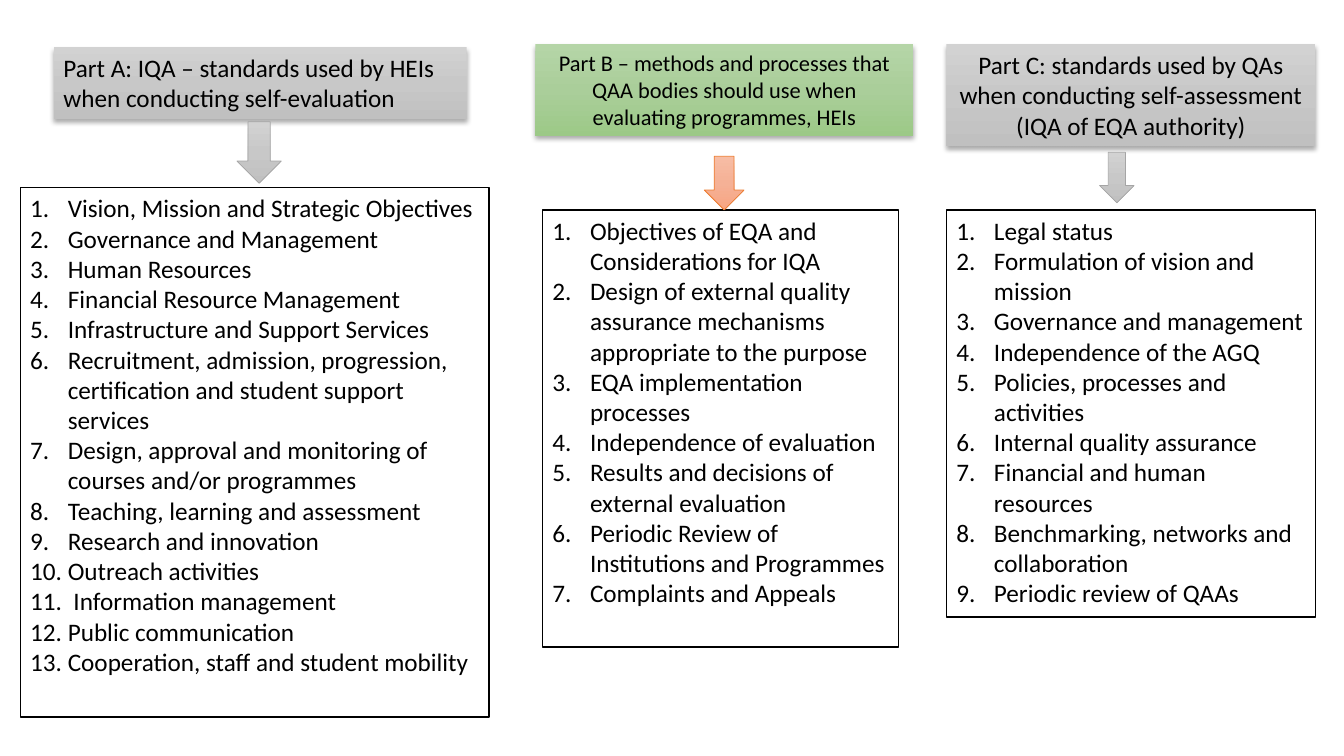
from lxml.etree import SubElement
from copy import deepcopy
from pptx import Presentation
from pptx.dml.color import RGBColor
from pptx.enum.shapes import MSO_SHAPE
from pptx.enum.text import MSO_ANCHOR, PP_ALIGN
from pptx.oxml.ns import qn
from pptx.util import Cm, Pt

GREY = ["D2D2D2", "C8C8C8", "C0C0C0"]
GREEN = ["B5D5A7", "AACE9A", "9CC987"]
ORANGE = ["F7BDA5", "F5B196", "F8A582"]
GREY_LINE = "A5A5A5"
ORANGE_LINE = "ED7D31"

PARTS = [
    {
        "title": "Part A: IQA – standards used by HEIs when conducting self-evaluation",
        "title_place": (1.35, 1.19, 10.41, 1.8),
        "title_style": (GREY, 18, PP_ALIGN.LEFT),
        "arrow_place": (5.97, 3.07, 1.12, 1.55),
        "arrow_style": (GREY, GREY_LINE),
        "list_place": (0.51, 4.73, 11.82, 13.34),
        "standards": [
            "Vision, Mission and Strategic Objectives",
            "Governance and Management",
            "Human Resources",
            "Financial Resource Management",
            "Infrastructure and Support Services",
            "Recruitment, admission, progression, certification and student support services",
            "Design, approval and monitoring of courses and/or programmes",
            "Teaching, learning and assessment",
            "Research and innovation",
            "Outreach activities",
            " Information management",
            "Public communication",
            "Cooperation, staff and student mobility",
        ],
    },
    {
        "title": "Part B – methods and processes that QAA bodies should use when "
                 "evaluating programmes, HEIs",
        "title_place": (13.49, 1.12, 9.53, 2.31),
        "title_style": (GREEN, 16, PP_ALIGN.CENTER),
        "arrow_place": (17.75, 3.94, 1, 1.35),
        "arrow_style": (ORANGE, ORANGE_LINE),
        "list_place": (13.67, 5.29, 8.97, 11.02),
        "standards": [
            "Objectives of EQA and Considerations for IQA",
            "Design of external quality assurance mechanisms appropriate to the purpose",
            "EQA implementation processes",
            "Independence of evaluation",
            "Results and decisions of external evaluation",
            "Periodic Review of Institutions and Programmes",
            "Complaints and Appeals",
        ],
    },
    {
        "title": "Part C: standards used by QAs when conducting self-assessment "
                 "(IQA of EQA authority)",
        "title_place": (23.85, 1.12, 9.3, 2.57),
        "title_style": (GREY, 18, PP_ALIGN.CENTER),
        "arrow_place": (27.71, 3.84, 0.87, 1.27),
        "arrow_style": (GREY, GREY_LINE),
        "list_place": (23.85, 5.29, 9.3, 10.26),
        "standards": [
            "Legal status",
            "Formulation of vision and mission",
            "Governance and management",
            "Independence of the AGQ",
            "Policies, processes and activities",
            "Internal quality assurance",
            "Financial and human resources",
            "Benchmarking, networks and collaboration",
            "Periodic review of QAAs",
        ],
    },
]


def colour(value):
    return RGBColor.from_string(value)


def add_box(page, kind, place):
    box = page.shapes.add_shape(kind, *[Cm(length) for length in place])
    box.shadow.inherit = False
    return box


def set_outline(box, value, width):
    box.line.color.rgb = colour(value)
    box.line.width = Pt(width)


def fill_gradient(box, colours):
    box.fill.gradient()
    box.fill.gradient_angle = 270
    stop_list = box.element.spPr.find(".//" + qn("a:gsLst"))
    stop_list.insert(1, deepcopy(stop_list[0]))
    for stop, value, position in zip(box.fill.gradient_stops, colours, (0, 0.5, 1)):
        stop.color.rgb = colour(value)
        stop.position = position


def add_shadow(box):
    effects = box.element.spPr.find(qn("a:effectLst"))
    shadow = SubElement(effects, qn("a:outerShdw"), blurRad=str(Pt(3.5)),
                        dist=str(Pt(2.2)), dir="5400000", rotWithShape="0")
    tone = SubElement(shadow, qn("a:srgbClr"), val="000000")
    SubElement(tone, qn("a:alpha"), val="32000")


def number_paragraph(para):
    properties = para._p.get_or_add_pPr()
    properties.set("marL", str(Cm(0.95)))
    properties.set("indent", str(-Cm(0.95)))
    SubElement(properties, qn("a:buFont"), typeface="+mj-lt")
    SubElement(properties, qn("a:buAutoNum"), type="arabicPeriod")


def write_text(box, lines, size, align, numbered=False):
    frame = box.text_frame
    frame.word_wrap = True
    frame.vertical_anchor = MSO_ANCHOR.TOP
    frame.text = "\n".join(lines)
    for para in frame.paragraphs:
        para.alignment = align
        if numbered:
            number_paragraph(para)
        para.font.name = "Calibri"
        para.font.size = Pt(size)
        para.font.color.rgb = colour("000000")


def add_title(page, text, place, colours, size, align):
    box = add_box(page, MSO_SHAPE.RECTANGLE, place)
    fill_gradient(box, colours)
    box.line.fill.background()
    add_shadow(box)
    write_text(box, [text], size, align)


def add_arrow(page, place, colours, outline):
    arrow = add_box(page, MSO_SHAPE.DOWN_ARROW, place)
    fill_gradient(arrow, colours)
    set_outline(arrow, outline, 0.5)


def add_standards(page, standards, place):
    box = add_box(page, MSO_SHAPE.RECTANGLE, place)
    box.fill.solid()
    box.fill.fore_color.rgb = colour("FFFFFF")
    set_outline(box, "000000", 1)
    write_text(box, standards, 18, PP_ALIGN.LEFT, numbered=True)


def main():
    deck = Presentation()
    deck.slide_width = Cm(33.87)
    deck.slide_height = Cm(19.05)
    page = deck.slides.add_slide(deck.slide_layouts[6])
    for part in PARTS:
        add_standards(page, part["standards"], part["list_place"])
        add_title(page, part["title"], part["title_place"], *part["title_style"])
        add_arrow(page, part["arrow_place"], *part["arrow_style"])
    deck.save("out.pptx")


if __name__ == "__main__":
    main()
